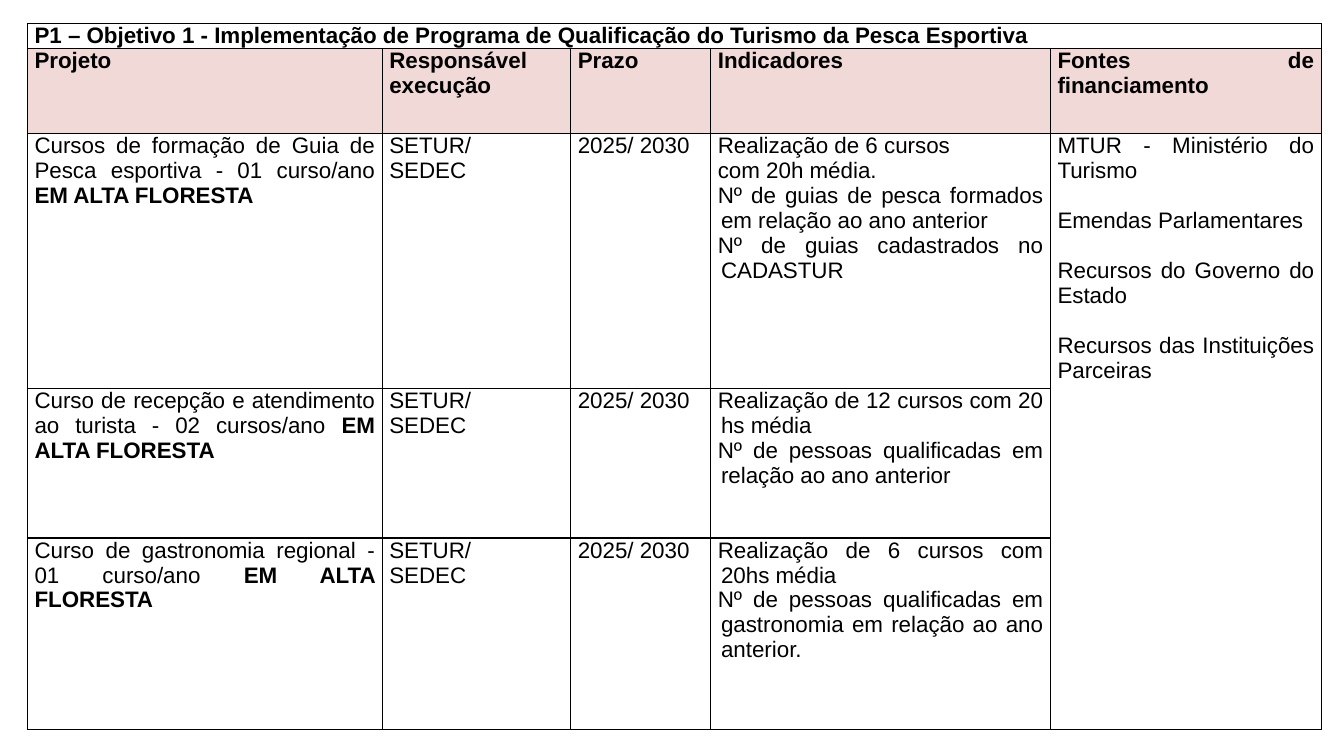
import pptx
import pptx.util
import pptx.dml.color
import pptx.enum.text
import pptx.oxml
from pptx.oxml.ns import nsdecls

Cm = pptx.util.Cm
Pt = pptx.util.Pt
COLORS = {"text": "000000", "border": "000000", "header": "F0D9D7"}
CITY = "**EM ALTA FLORESTA"  # ** starts bold text
AGENCIES = ["SETUR/", "SEDEC"]
PERIOD = ["2025/ 2030"]
INDICATORS, FUNDING = 3, 4

plan = [
    [["**P1 – Objetivo 1 - Implementação de Programa de Qualificação do Turismo da Pesca Esportiva"]],
    [["**Projeto"], ["**Responsável execução"], ["**Prazo"], ["**Indicadores"],
     ["**Fontes de financiamento"]],
    [["Cursos de formação de Guia de Pesca esportiva - 01 curso/ano " + CITY], AGENCIES, PERIOD,
     ["Realização de 6 cursos", "com 20h média.",
      "Nº de guias de pesca formados em relação ao ano anterior",
      "Nº de guias cadastrados no CADASTUR"],
     ["MTUR - Ministério do Turismo", "Emendas Parlamentares",
      "Recursos do Governo do Estado", "Recursos das Instituições Parceiras"]],
    [["Curso de recepção e atendimento ao turista - 02 cursos/ano " + CITY], AGENCIES, PERIOD,
     ["Realização de 12 cursos com 20 hs média",
      "Nº de pessoas qualificadas em relação ao ano anterior"]],
    [["Curso de gastronomia regional - 01 curso/ano " + CITY], AGENCIES, PERIOD,
     ["Realização de 6 cursos com 20hs média",
      "Nº de pessoas qualificadas em gastronomia em relação ao ano anterior."]],
]
column_widths = [8.94, 4.75, 3.53, 8.56, 6.83]
row_heights = [0.28, 2.14, 6.43, 3.76, 4.83]
cell_format = {"margin_left": Cm(0.18), "margin_right": Cm(0.18), "margin_top": 0, "margin_bottom": 0}
text_format = {"size": Pt(16), "name": "Arial"}


def add_borders(cell):
    properties = cell._tc.get_or_add_tcPr()
    for position, side in enumerate(("lnL", "lnR", "lnT", "lnB")):
        properties.insert(position, pptx.oxml.parse_xml(
            f'<a:{side} {nsdecls("a")} w="{Pt(1)}"><a:solidFill>'
            f'<a:srgbClr val="{COLORS["border"]}"/></a:solidFill></a:{side}>'))


presentation = pptx.Presentation()
presentation.slide_width = Cm(33.87)
presentation.slide_height = Cm(19.05)
slide = presentation.slides.add_slide(presentation.slide_layouts[6])
table = slide.shapes.add_table(
    len(row_heights), len(column_widths), Cm(0.69), Cm(0.6),
    Cm(sum(column_widths)), Cm(sum(row_heights))).table
for column, width in zip(table.columns, column_widths):
    column.width = Cm(width)
for row, height in zip(table.rows, row_heights):
    row.height = Cm(height)
table.cell(0, 0).merge(table.cell(0, FUNDING))
table.cell(2, FUNDING).merge(table.cell(4, FUNDING))

for r in range(len(row_heights)):
    for c in range(len(column_widths)):
        cell = table.cell(r, c)
        for attribute, value in cell_format.items():
            setattr(cell, attribute, value)
        if r == 1:
            cell.fill.solid()
            cell.fill.fore_color.rgb = pptx.dml.color.RGBColor.from_string(COLORS["header"])
        else:
            cell.fill.background()
        add_borders(cell)
        # Keeps the cells hidden by a merge from stretching their row
        cell.text_frame.paragraphs[0].font.size = text_format["size"]

for r, row_texts in enumerate(plan):
    for c, lines in enumerate(row_texts):
        frame = table.cell(r, c).text_frame
        for number, line in enumerate(lines):
            paragraph = frame.add_paragraph() if number else frame.paragraphs[0]
            paragraph.alignment = pptx.enum.text.PP_ALIGN.JUSTIFY
            if r > 1 and c == INDICATORS:
                indent = paragraph._p.get_or_add_pPr()
                indent.set("marL", str(Cm(0.08)))
                indent.set("indent", str(-Cm(0.08)))
            if c == FUNDING and number:
                paragraph.space_before = Pt(18)
            for part, text in enumerate(line.split("**")):
                if text:
                    run = paragraph.add_run()
                    run.text = text
                    run.font.bold = part == 1
                    run.font.color.rgb = pptx.dml.color.RGBColor.from_string(COLORS["text"])
                    for attribute, value in text_format.items():
                        setattr(run.font, attribute, value)

presentation.save("out.pptx")
